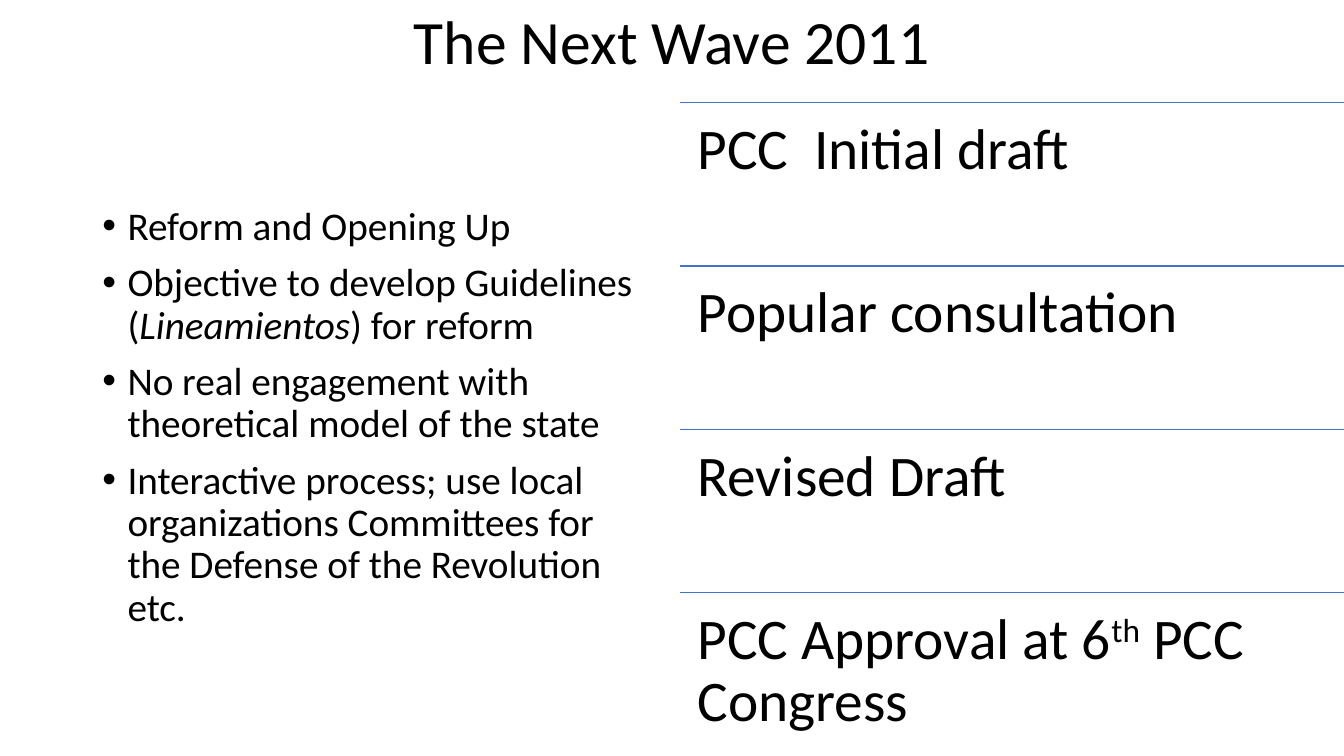
import pptx
import pptx.dml.color
import pptx.enum.shapes
import pptx.enum.text
import pptx.oxml
import pptx.oxml.ns
import pptx.util

Pt = pptx.util.Pt
ANCHOR = pptx.enum.text.MSO_ANCHOR

TITLE = "The Next Wave 2011"
# Each line is a list of (words, style) spans
POINTS = [
    [("Reform and Opening Up", "")],
    [("Objective to develop Guidelines  (", ""), ("Lineamientos", "italic"),
     (") for reform", "")],
    [("No real engagement with theoretical model of the state", "")],
    [("Interactive process; use local organizations Committees for "
      "the Defense of the Revolution etc.", "")],
]
STAGES = [
    [("PCC  Initial draft", "")],
    [("Popular consultation", "")],
    [("Revised Draft", "")],
    [("PCC Approval at 6", ""), ("th", "superscript"), (" PCC Congress", "")],
]

FONT, BLACK, BLUE = "Calibri", "000000", "4472C4"
PAGE_WIDTH, PAGE_HEIGHT = 960, 540
MARGIN = 66
STAGES_LEFT, STAGES_TOP = 486, 73.4
STAGE_WIDTH = PAGE_WIDTH - STAGES_LEFT
STAGE_HEIGHT = (PAGE_HEIGHT - STAGES_TOP) / len(STAGES)
STAGE_INSET = 12.3
BULLET_INDENT = 18


def color(value):
    return pptx.dml.color.RGBColor.from_string(value)


def place(shape, left, top, width, height):
    shape.left, shape.top = Pt(left), Pt(top)
    shape.width, shape.height = Pt(width), Pt(height)


def prepare(box, anchor, inset=None):
    """Set wrapping, anchor and, if given, equal insets; return the frame."""
    frame = box.text_frame
    frame.word_wrap = True
    frame.auto_size = pptx.enum.text.MSO_AUTO_SIZE.NONE
    frame.vertical_anchor = anchor
    if inset is not None:
        frame.margin_left = frame.margin_right = Pt(inset)
        frame.margin_top = frame.margin_bottom = Pt(inset)
    return frame


def write(para, spans, size):
    para.line_spacing = 0.9
    for words, style in spans:
        span = para.add_run()
        span.text = words
        span.font.name = FONT
        span.font.size = Pt(size)
        span.font.color.rgb = color(BLACK)
        if style == "italic":
            span.font.italic = True
        elif style == "superscript":
            span._r.get_or_add_rPr().set("baseline", "30000")


def add_bullet(para):
    properties = para._p.get_or_add_pPr()
    properties.set("marL", str(Pt(BULLET_INDENT)))
    properties.set("indent", str(-Pt(BULLET_INDENT)))
    namespace = pptx.oxml.ns.nsdecls("a")
    for markup in (f'<a:buFont {namespace} typeface="Arial"/>',
                   f'<a:buChar {namespace} char="•"/>'):
        properties.append(pptx.oxml.parse_xml(markup))


def add_rule(page, left, top, width):
    rule = page.shapes.add_connector(
        pptx.enum.shapes.MSO_CONNECTOR.STRAIGHT,
        Pt(left), Pt(top), Pt(left + width), Pt(top))
    rule.line.color.rgb = color(BLUE)
    rule.line.width = Pt(1)
    rule._element.spPr.append(
        pptx.oxml.parse_xml(f'<a:effectLst {pptx.oxml.ns.nsdecls("a")}/>'))


def add_title(page):
    title = page.shapes.title
    place(title, MARGIN, 0, PAGE_WIDTH - 2 * MARGIN, 63.4)
    para = prepare(title, ANCHOR.MIDDLE).paragraphs[0]
    para.alignment = pptx.enum.text.PP_ALIGN.CENTER
    write(para, [(TITLE, "")], 44)


def add_stages(page):
    for number, spans in enumerate(STAGES):
        top = STAGES_TOP + number * STAGE_HEIGHT
        add_rule(page, STAGES_LEFT, top, STAGE_WIDTH)
        box = page.shapes.add_textbox(
            Pt(STAGES_LEFT), Pt(top), Pt(STAGE_WIDTH), Pt(STAGE_HEIGHT))
        frame = prepare(box, ANCHOR.TOP, STAGE_INSET)
        write(frame.paragraphs[0], spans, 41)


def add_points(page):
    box = page.shapes.add_textbox(Pt(MARGIN), Pt(144), Pt(408), Pt(342.7))
    frame = prepare(box, ANCHOR.TOP)
    for number, spans in enumerate(POINTS):
        para = frame.add_paragraph() if number else frame.paragraphs[0]
        add_bullet(para)
        if number:
            para.space_before = Pt(10)
        write(para, spans, 28)


def main():
    deck = pptx.Presentation()
    deck.slide_width, deck.slide_height = Pt(PAGE_WIDTH), Pt(PAGE_HEIGHT)
    page = deck.slides.add_slide(deck.slide_layouts.get_by_name("Title Only"))
    add_title(page)
    add_stages(page)
    add_points(page)
    deck.save("out.pptx")


if __name__ == "__main__":
    main()
